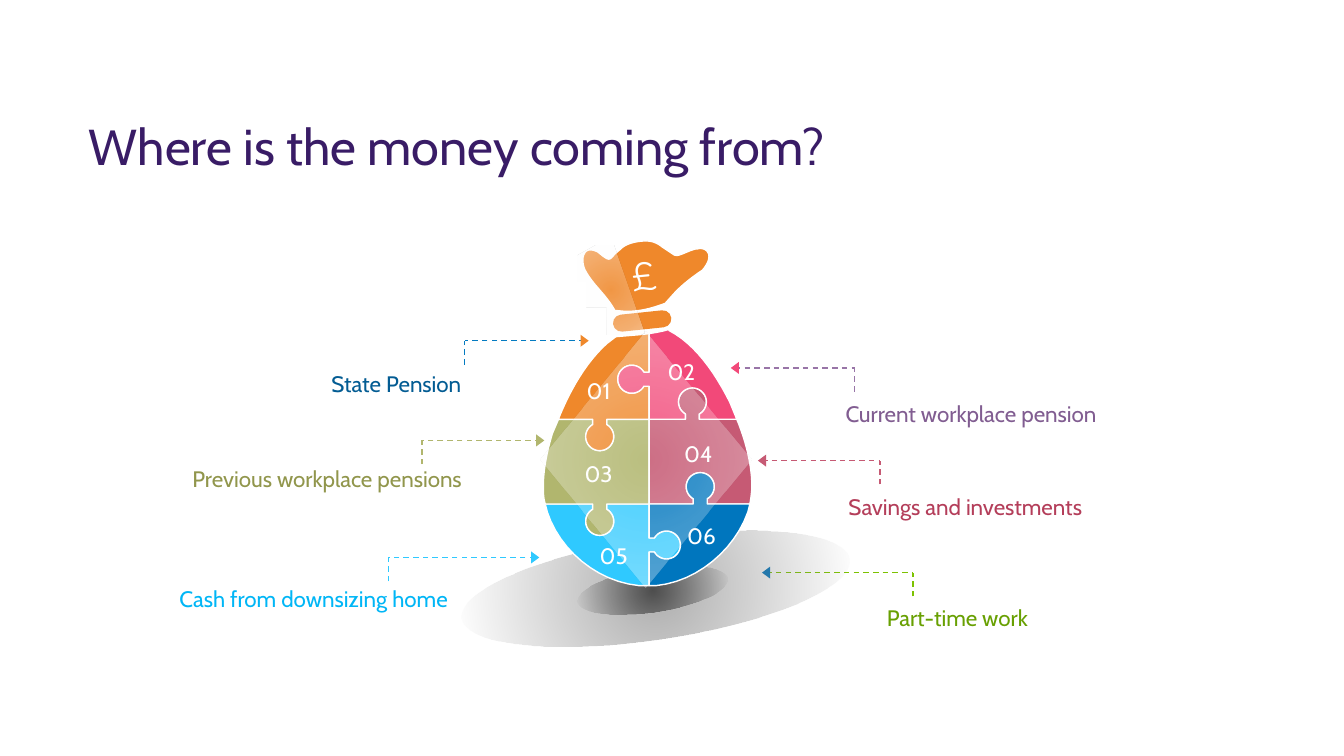
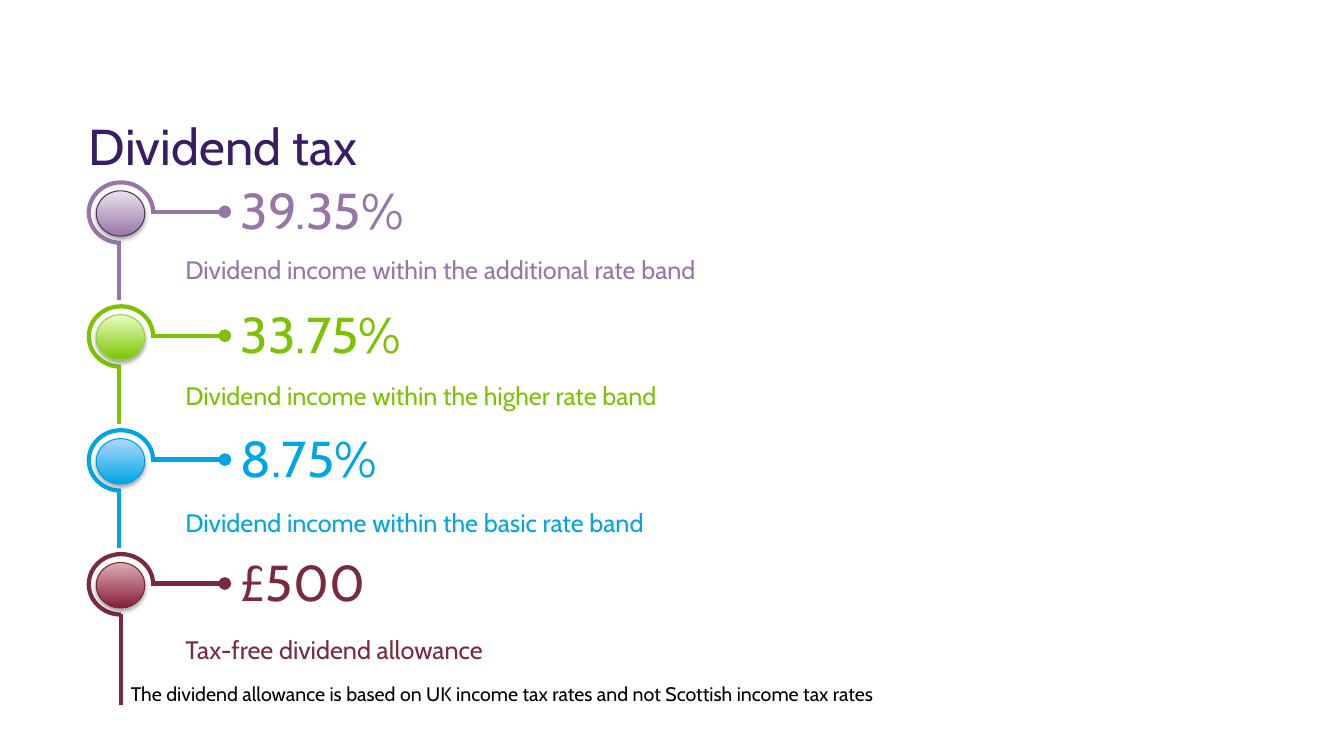
from math import cos, dist, radians, sin

from pptx import Presentation
from pptx.dml.color import RGBColor
from pptx.enum.dml import MSO_LINE
from pptx.enum.shapes import MSO_CONNECTOR, MSO_SHAPE
from pptx.enum.text import MSO_ANCHOR, MSO_AUTO_SIZE, PP_ALIGN
from pptx.oxml import parse_xml
from pptx.oxml.ns import nsdecls, qn
from pptx.util import Pt

FONT = "Cabin"
TITLE_COLOUR = "391C66"
WHITE = "FFFFFF"
ORANGE, PINK, GREEN, ROSE, CYAN, BLUE = (
    "EF882B", "F24979", "B1B66E", "C65A74", "2FC9FF", "0076BE")

# Income sources: label, colour, (left, top), line colour, arrow colour,
# arrow x, elbow x, line y
SOURCES = [
    ("State Pension", "035C93", (229.7, 260.6), "047BC1", ORANGE, 417.6, 332, 243.4),
    ("Previous workplace pensions", "91964C", (130.3, 329), GREEN, GREEN, 385.9, 301.3, 314.6),
    ("Cash from downsizing home", "00B6F6", (121, 414.7), CYAN, CYAN, 382.3, 277.6, 398.2),
    ("Current workplace pension", "815D91", (596.9, 282.2), "9875A7", PINK, 524.9, 610.4, 262.8),
    ("Savings and investments", "B43E5A", (599, 348.5), ROSE, ROSE, 544.3, 628.7, 329),
    ("Part-time work", "68A002", (626.4, 427.7), "7DC202", BLUE, 547.2, 652.2, 409),
]
STEM = 17

# Puzzle corners, from the top of the bag to the bottom
TOP, BOTTOM = (463.7, 238.3), (463.7, 418.3)
UPPER_LEFT, UPPER_MID, UPPER_RIGHT = (398.9, 299.5), (463.7, 299.5), (526.3, 299.5)
LOWER_LEFT, LOWER_MID, LOWER_RIGHT = (389.5, 360), (463.7, 360), (535.7, 360)
KNOB_RADIUS, KNOB_REACH = 10, 12.4

# Bag edges: pairs are line ends, sixes are cubic curves
EDGES = {
    "01": [UPPER_LEFT, (400.3, 295.9), (408.2, 277.2, 419, 258.5, 433.4, 245.5),
           (439.9, 240.5), (447, 239.8, 456, 239.3, *TOP)],
    "02": [TOP, (468, 237.6, 473, 236.8, 477.4, 235.4), (478.1, 236.2),
           (496.1, 245.5, 510.5, 265.7, 521.3, 287.3), UPPER_RIGHT],
    "03": [LOWER_LEFT, (388.1, 355.7, 388.1, 351.4, 388.1, 347),
           (388.1, 337, 390.2, 324, 394.6, 309.6), UPPER_LEFT],
    "04": [UPPER_RIGHT, (527.8, 303.1), (534.2, 319.7, 537.1, 335.5, 537.1, 347),
           (537.1, 351.4, 536.4, 355.7, *LOWER_RIGHT)],
    "05": [BOTTOM, (456.5, 418.3), (426.2, 415.4, 399.6, 392.4, 391, 365.8), LOWER_LEFT],
    "06": [LOWER_RIGHT, (534.2, 365.8), (524.9, 392.4, 498.2, 415.4, 468.7, 418.3), BOTTOM],
}
BAG_NECK = [
    (460.8, 172.1), (465.8, 172.1, 469.4, 173.5, 473, 176.4), (481.7, 182.2),
    (483.8, 182.9, 485.3, 182.2, 487.4, 181.4), (492.5, 179.3),
    (494.6, 178.6, 496.1, 177.8, 498.2, 177.8), (501.1, 177.1, 504, 177.8, 505.4, 180),
    (507.6, 182.9, 506.2, 187.9, 501.8, 193), (497.5, 195.8, 487.4, 203, 481, 210.2),
    (475.2, 216.7), (465.8, 220.3, 457.2, 222.5, 447.1, 222.5), (439.2, 221.8),
    (436.3, 216.7, 434.9, 214.6, 425.5, 203.8), (421.2, 198.7, 419, 195.1, 417.6, 192.2),
    (415.4, 186.5, 416.2, 181.4, 419, 179.3), (421.2, 177.8, 424.1, 178.6, 427, 180),
    (429, 181.5, 432, 184.3, 434.2, 185), (436, 185.5, 437, 184, 439.2, 181.4),
    (443.5, 177.8), (446, 175, 452, 172.5, 460.8, 172.1),
]
GLINTS = [
    [(460.8, 236.9), (536.4, 328.3), (460.8, 419.8), (385.9, 328.3)],
    [(425.5, 175.7), (438.5, 175.7), (460.1, 237.6), (457.2, 239), (433.4, 239),
     (433.4, 219.6), (419, 219.6), (419, 201.6), (412.6, 201.6), (412.6, 182.9)],
]
GLINT_STOPS = [(0, WHITE, 12), (75, WHITE, 33), (100, WHITE, 44)]
# Floor shadow: box, colour, opacity at the centre
FLOOR_SHADOWS = [((328.3, 384.5, 280.1, 72), "808080", 65),
                 ((411.8, 406.1, 108.7, 31), "434343", 90)]
NUMBERS = {"01": (404.6, 265.7), "02": (463.7, 252), "03": (404.6, 325.4),
           "04": (475.9, 311), "05": (415.4, 383.8), "06": (478.1, 369.4)}

# Dividend tax: value, caption, colour, light disc colour, dark disc colour, disc line
BANDS = [
    ("39.35%", "Dividend income within the additional rate band",
     "9875A7", "EAE3ED", "9875A7", "4D3757"),
    ("33.75%", "Dividend income within the higher rate band",
     "7DC202", "E8FEC1", "7DC202", "92D050"),
    ("8.75%", "Dividend income within the basic rate band",
     "00A5E3", "AFD9FF", "00A5E3", "00A1DE"),
    ("£500", "Tax-free dividend allowance",
     "7A2A3D", "DBAEB4", "861E37", "79273B"),
]
FOOTNOTE = "The dividend allowance is based on UK income tax rates and not Scottish income tax rates"
BAND_TOP, BAND_PITCH, CAPTION_TOP, CAPTION_PITCH = 130.3, 88.5, 177.8, 90.5


def rgb(colour):
    return RGBColor.from_string(colour)


def points(*lengths):
    return [Pt(length) for length in lengths]


def style_text(paragraph, size, colour, font=FONT):
    paragraph.font.size = Pt(size)
    paragraph.font.name = font
    paragraph.font.color.rgb = rgb(colour)


def titled_slide(deck, title):
    slide = deck.slides.add_slide(deck.slide_layouts[5])
    heading = slide.shapes.title
    heading.left, heading.top, heading.width, heading.height = points(63.4, 83.5, 833.8, 41)
    frame = heading.text_frame
    frame.text = title
    frame.auto_size = MSO_AUTO_SIZE.NONE
    frame.vertical_anchor = MSO_ANCHOR.MIDDLE
    frame.margin_left = frame.margin_right = frame.margin_top = frame.margin_bottom = 0
    frame.paragraphs[0].alignment = PP_ALIGN.LEFT
    style_text(frame.paragraphs[0], 36, TITLE_COLOUR)
    return slide


def add_text(slide, text, box, size, colour, align=PP_ALIGN.LEFT, font=FONT):
    label = slide.shapes.add_textbox(*points(*box))
    frame = label.text_frame
    frame.word_wrap = True
    frame.text = text
    frame.paragraphs[0].alignment = align
    style_text(frame.paragraphs[0], size, colour, font)
    return label


def paint(shape, fill=None, line=None, width=1.0):
    shape.shadow.inherit = False
    if fill:
        shape.fill.solid()
        shape.fill.fore_color.rgb = rgb(fill)
    else:
        shape.fill.background()
    if line:
        shape.line.color.rgb = rgb(line)
        shape.line.width = Pt(width)
    else:
        shape.line.fill.background()
    return shape


def paint_gradient(shape, stops, radial=True):
    """Replace an empty fill by stops of (position, colour, opacity)."""
    stop_xml = "".join(
        f'<a:gs pos="{position * 1000}"><a:srgbClr val="{colour}">'
        f'<a:alpha val="{opacity * 1000}"/></a:srgbClr></a:gs>'
        for position, colour, opacity in stops)
    course = ('<a:path path="circle"><a:fillToRect l="50000" t="50000" r="50000" b="50000"/>'
              '</a:path>' if radial else '<a:lin ang="5400000" scaled="0"/>')
    properties = shape._element.spPr
    properties.replace(properties.find(qn("a:noFill")), parse_xml(
        f'<a:gradFill {nsdecls("a")} rotWithShape="1"><a:gsLst>{stop_xml}</a:gsLst>'
        f'{course}</a:gradFill>'))


def add_line(slide, start, end, colour, width, dashed=False, dot=False):
    line = slide.shapes.add_connector(MSO_CONNECTOR.STRAIGHT, *points(*start, *end))
    line.line.color.rgb = rgb(colour)
    line.line.width = Pt(width)
    if dashed:
        line.line.dash_style = MSO_LINE.DASH
    if dot:
        line.line._get_or_add_ln().append(parse_xml(f'<a:tailEnd {nsdecls("a")} type="oval"/>'))
    line._element.spPr.append(parse_xml(f'<a:effectLst {nsdecls("a")}/>'))


def add_outline(slide, corners):
    builder = slide.shapes.build_freeform(*points(*corners[0]), scale=1.0)
    builder.add_line_segments([points(*corner) for corner in corners[1:]], close=True)
    return builder.convert_to_shape()


def flatten(segments, steps=12):
    """Turn line ends and cubic curves into a list of corners."""
    corners = [segments[0]]
    for segment in segments[1:]:
        if len(segment) == 2:
            corners.append(segment)
            continue
        x0, y0 = corners[-1]
        x1, y1, x2, y2, x3, y3 = segment
        for step in range(1, steps + 1):
            t = step / steps
            a, b, c, d = (1 - t) ** 3, 3 * t * (1 - t) ** 2, 3 * t * t * (1 - t), t ** 3
            corners.append((a * x0 + b * x1 + c * x2 + d * x3,
                            a * y0 + b * y1 + c * y2 + d * y3))
    return corners


def seam(start, end, along, side):
    """Straight seam with one round knob; side 1 is right of the way, -1 left."""
    length = dist(start, end)
    ux, uy = (end[0] - start[0]) / length, (end[1] - start[1]) / length
    nx, ny = -uy * side, ux * side

    def place(forward, outward):
        return (start[0] + forward * ux + outward * nx,
                start[1] + forward * uy + outward * ny)

    half_neck = KNOB_RADIUS / 2
    knob = [place(along + KNOB_RADIUS * sin(radians(angle)),
                  KNOB_REACH - KNOB_RADIUS * cos(radians(angle)))
            for angle in range(-30, -331, -10)]
    return [start, place(along - half_neck, 0), *knob, place(along + half_neck, 0), end]


def puzzle_pieces():
    top = seam(TOP, UPPER_MID, 32.6, 1)
    bottom = seam(LOWER_MID, BOTTOM, 29.3, -1)
    upper_left = seam(UPPER_LEFT, UPPER_MID, 29.5, 1)
    upper_right = seam(UPPER_MID, UPPER_RIGHT, 30.9, -1)
    lower_left = seam(LOWER_LEFT, LOWER_MID, 38.9, 1)
    lower_right = seam(LOWER_MID, LOWER_RIGHT, 36.5, -1)
    edge = {number: flatten(segments) for number, segments in EDGES.items()}
    return [
        (CYAN, edge["05"] + lower_left + bottom),
        (GREEN, edge["03"] + upper_left + lower_left[::-1]),
        (ORANGE, edge["01"] + top + upper_left[::-1]),
        (ROSE, edge["04"] + lower_right[::-1] + upper_right),
        (BLUE, edge["06"] + bottom[::-1] + lower_right),
        (PINK, edge["02"] + upper_right[::-1] + top[::-1]),
    ]


def add_money_bag(slide):
    for box, colour, opacity in FLOOR_SHADOWS:
        floor = paint(slide.shapes.add_shape(MSO_SHAPE.OVAL, *points(*box)))
        paint_gradient(floor, [(0, colour, opacity), (100, colour, 0)])
        floor.rotation = -8.6
    for colour, corners in puzzle_pieces() + [(ORANGE, flatten(BAG_NECK))]:
        paint(add_outline(slide, corners), colour, WHITE)
    pound = add_text(slide, "£", (436.3, 175.7, 46, 41), 28, WHITE, PP_ALIGN.CENTER, "Quicksand")
    pound.rotation = -5.7
    for number, corner in NUMBERS.items():
        add_text(slide, number, (*corner, 46, 26.6), 16, WHITE, PP_ALIGN.CENTER)
    tie = slide.shapes.add_shape(MSO_SHAPE.ROUNDED_RECTANGLE, *points(437.8, 223.2, 41.8, 12.2))
    tie.adjustments[0] = 0.5
    tie.rotation = -6
    paint(tie, ORANGE)
    for corners in GLINTS:
        paint_gradient(paint(add_outline(slide, corners)), GLINT_STOPS)


def add_source(slide, label, colour, corner, line_colour, arrow_colour, arrow_x, elbow_x, y):
    add_text(slide, label, (*corner, 220, 26.6), 16, colour)
    add_line(slide, (arrow_x, y), (elbow_x, y), line_colour, 1, dashed=True)
    add_line(slide, (elbow_x, y + STEM), (elbow_x, y), line_colour, 1, dashed=True)
    width, height = 8.6, 5.8
    arrow = slide.shapes.add_shape(
        MSO_SHAPE.ISOSCELES_TRIANGLE,
        *points(arrow_x - width / 2, y - height / 2, width, height))
    arrow.rotation = 90 if arrow_x > elbow_x else 270
    paint(arrow, arrow_colour)


def add_band(slide, row, value, caption, colour, light, dark, rim):
    top = BAND_TOP + row * BAND_PITCH
    last = row == len(BANDS) - 1
    # Ring, open at the lower right
    ring = slide.shapes.add_shape(MSO_SHAPE.ARC, *points(63.4, top, 46, 43.2))
    ring.adjustments[0], ring.adjustments[1] = 54, 213.7
    paint(ring, line=colour, width=3)
    # Stem and pointer
    stem_x, stem_end = (86.4, 108) if last else (85, 84.2)
    add_line(slide, (stem_x, top + stem_end), (stem_x, top + 42.5), colour, 3)
    add_line(slide, (108, top + 21), (160.6, top + 21), colour, 3, dot=True)
    # Disc
    disc = paint(slide.shapes.add_shape(MSO_SHAPE.OVAL, *points(68.8, top + 6, 34.6, 32.4)),
                 line=rim, width=0.75)
    paint_gradient(disc, [(0, light, 100), (100, dark, 100)], radial=False)
    disc._element.spPr.find(qn("a:effectLst")).append(parse_xml(
        f'<a:outerShdw {nsdecls("a")} blurRad="{Pt(3.1)}" dist="{Pt(1.8)}" dir="5400000" '
        'rotWithShape="0"><a:srgbClr val="000000"><a:alpha val="35000"/></a:srgbClr>'
        '</a:outerShdw>'))
    # Words
    add_text(slide, value, (164.9, top - 5.8, 190, 51), 36, colour)
    add_text(slide, caption, (125.3, CAPTION_TOP + row * CAPTION_PITCH, 570, 29), 18, colour)


def main():
    deck = Presentation()
    deck.slide_width, deck.slide_height = points(960, 540)

    money = titled_slide(deck, "Where is the money coming from?")
    for source in SOURCES:
        add_source(money, *source)
    add_money_bag(money)

    tax = titled_slide(deck, "Dividend tax")
    for row, band in enumerate(BANDS):
        add_band(tax, row, *band)
    add_text(tax, FOOTNOTE, (86.4, 483.8, 766, 24.5), 14, "000000")

    deck.save("out.pptx")


if __name__ == "__main__":
    main()
